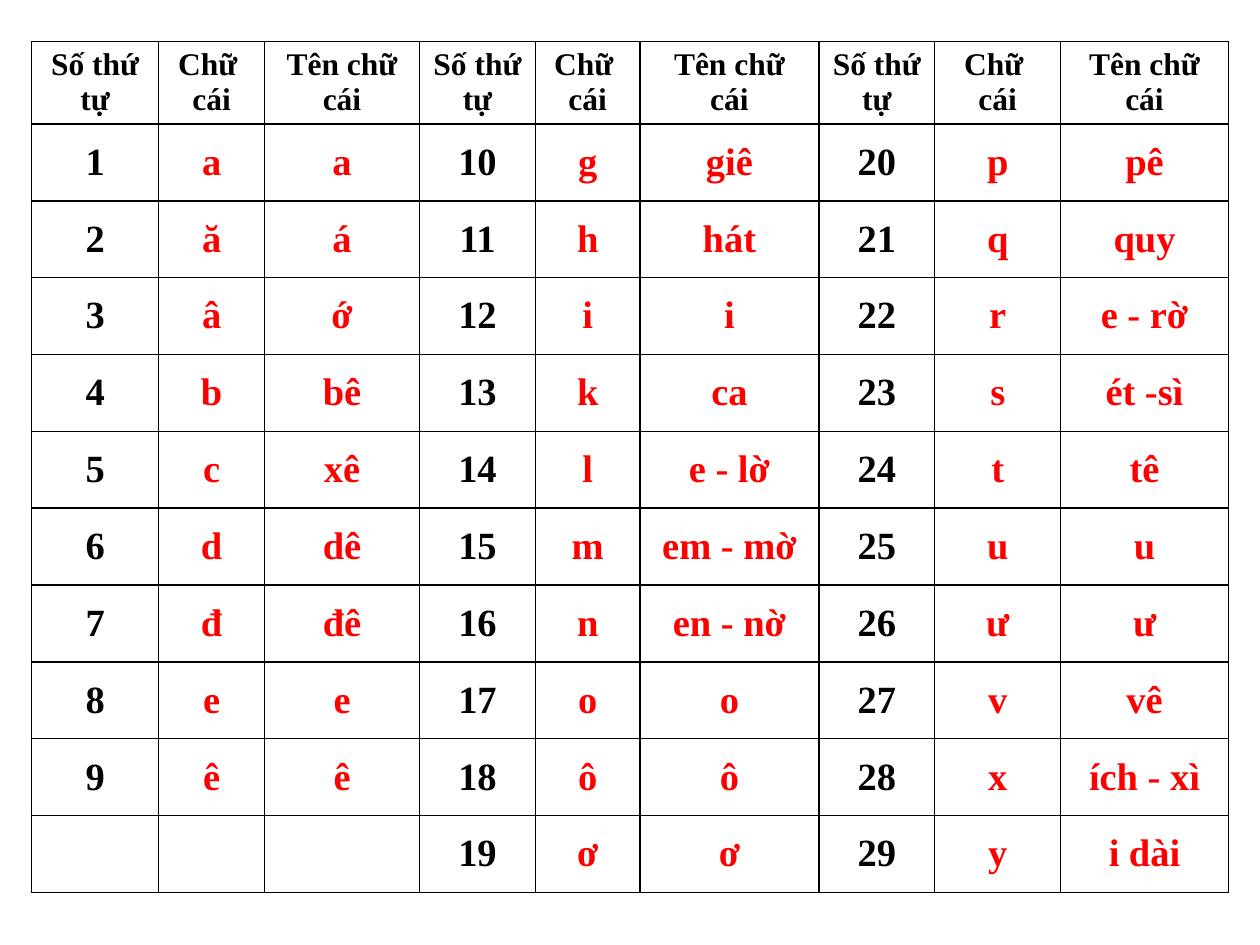
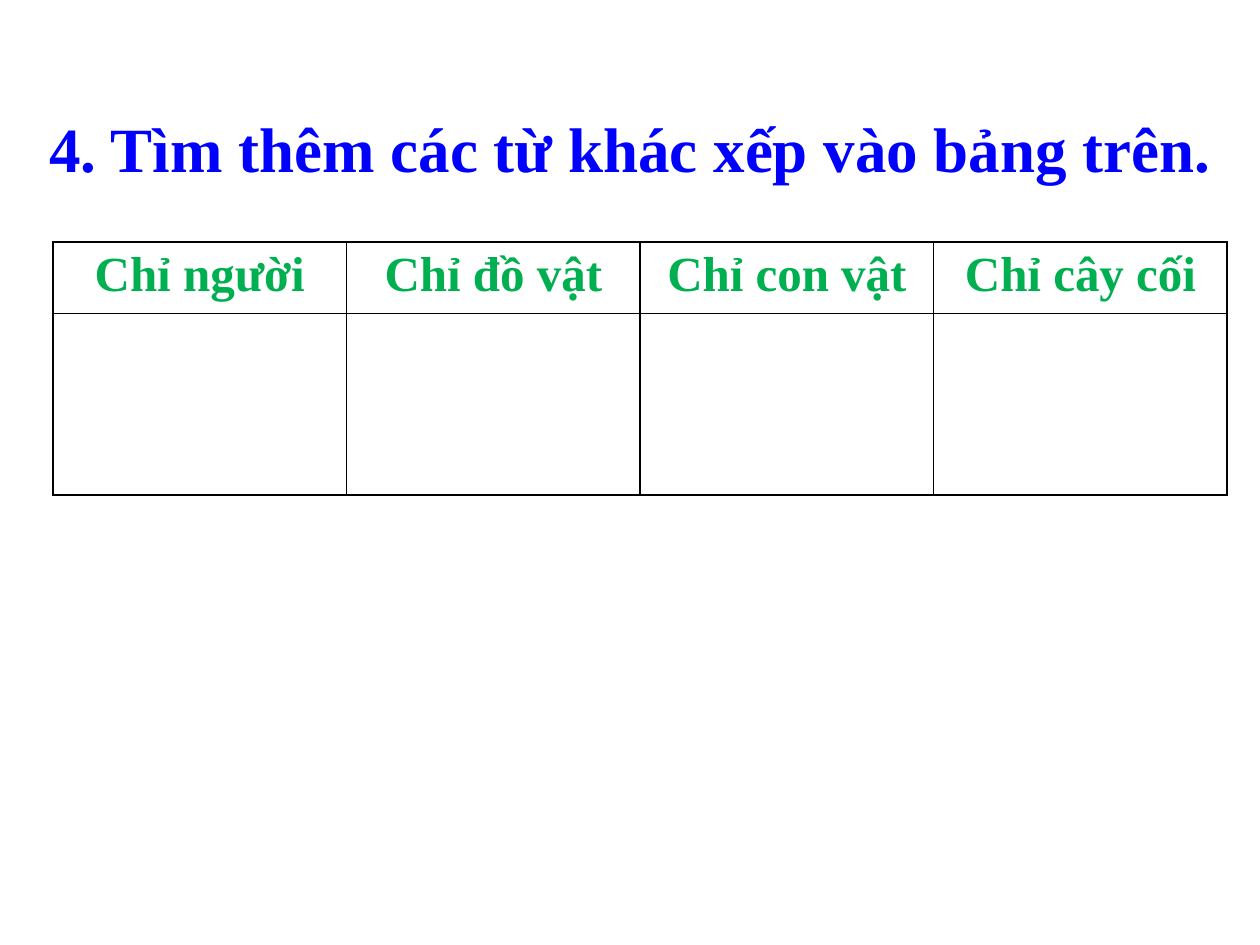
"""Builds two slides: the Vietnamese alphabet grid and a word sorting table."""
from lxml.etree import SubElement
from pptx import Presentation
from pptx.dml.color import RGBColor
from pptx.enum.text import MSO_ANCHOR, MSO_AUTO_SIZE, PP_ALIGN
from pptx.oxml.ns import qn
from pptx.util import Inches, Pt

HUES = {"ink": "000000", "red": "FF0000", "blue": "0000FF", "green": "00B050"}
FONT = {"name": "Times New Roman", "bold": True}


def write(frame, text, size, hue):
    frame.text = text
    for para in frame.paragraphs:
        para.alignment = PP_ALIGN.CENTER
        for run in para.runs:
            for key, value in {**FONT, "size": Pt(size)}.items():
                setattr(run.font, key, value)
            run.font.color.rgb = RGBColor.from_string(HUES[hue])


def grid(slide, left, top, wide, high):
    area = [Inches(n) for n in (left, top, sum(wide), sum(high))]
    table = slide.shapes.add_table(len(high), len(wide), *area).table
    for col, width in zip(table.columns, wide):
        col.width = Inches(width)
    for row, height in zip(table.rows, high):
        row.height = Inches(height)
    for flag in ("first_row", "horz_banding"):
        setattr(table, flag, False)
    for cell in table.iter_cells():
        props = cell._tc.get_or_add_tcPr()
        for side in "LRTB":
            line = SubElement(props, qn(f"a:ln{side}"), w=str(Pt(1)))
            fill = SubElement(line, qn("a:solidFill"))
            SubElement(fill, qn("a:srgbClr"), val=HUES["ink"])
        cell.fill.background()
    return table


deck = Presentation()
deck.slide_width, deck.slide_height = Inches(10), Inches(7.5)
blank = deck.slide_layouts[6]

heads = ["Số thứ tự", "Chữ \ncái", "Tên chữ cái"]
groups = [
    ("a ă â b c d đ e ê", "a,á,ớ,bê,xê,dê,đê,e,ê"),
    ("g h i k l m n o ô ơ", "giê,hát,i,ca,e - lờ,em - mờ,en - nờ,o,ô,ơ"),
    ("p q r s t u ư v x y", "pê,quy,e - rờ,ét -sì,tê,u,ư,vê,ích - xì,i dài"),
]
wide = [1.01, 0.84, 1.23, 0.92, 0.83, 1.42, 0.92, 1, 1.33]
table = grid(deck.slides.add_slide(blank), 0.25, 0.33, wide, [0.62] + [0.61] * 10)
count = 0
for band, (signs, names) in enumerate(groups):
    for step, head in enumerate(heads):
        write(table.cell(0, 3 * band + step).text_frame, head, 18, "ink")
    for row, (sign, name) in enumerate(zip(signs.split(), names.split(",")), 1):
        count += 1
        for step, text in enumerate((str(count), sign, name)):
            cell = table.cell(row, 3 * band + step)
            cell.vertical_anchor = MSO_ANCHOR.MIDDLE
            write(cell.text_frame, text, 22, "red" if step else "ink")

slide = deck.slides.add_slide(blank)
box = slide.shapes.add_textbox(0, Inches(0.82), deck.slide_width, Inches(0.71))
frame = box.text_frame
write(frame, "4. Tìm thêm các từ khác xếp vào bảng trên.", 36, "blue")
for key, value in {"word_wrap": True, "auto_size": MSO_AUTO_SIZE.SHAPE_TO_FIT_TEXT}.items():
    setattr(frame, key, value)
frame.paragraphs[0].space_before = Pt(6)

kinds = ["Chỉ người", "Chỉ đồ vật", "Chỉ con vật", "Chỉ cây cối"]
table = grid(slide, 0.42, 1.92, [2.33] * len(kinds), [0.57, 1.44])
for col, kind in enumerate(kinds):
    write(table.cell(0, col).text_frame, kind, 28, "green")

deck.save("out.pptx")
